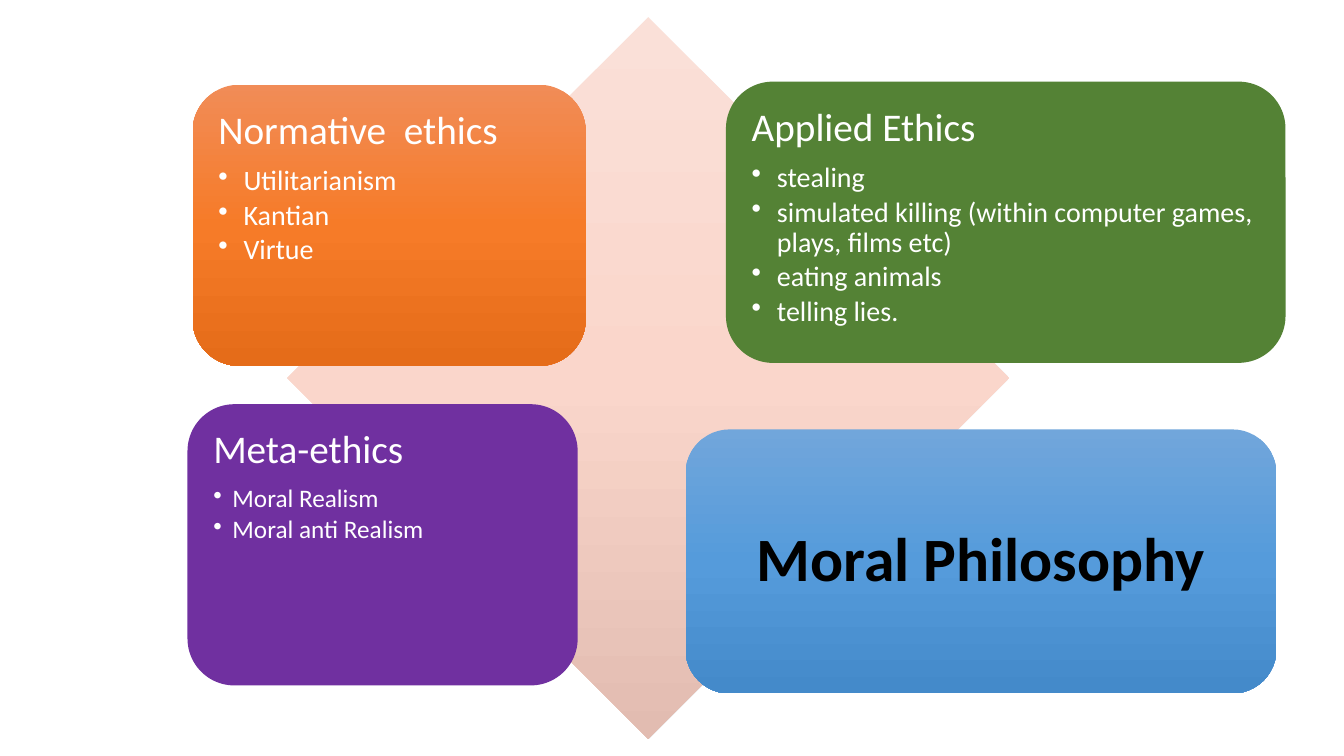
from copy import deepcopy

from pptx import Presentation
from pptx.dml.color import RGBColor
from pptx.enum.shapes import MSO_SHAPE as Shape
from pptx.enum.text import MSO_ANCHOR as Anchor, MSO_AUTO_SIZE as AutoSize, PP_ALIGN as Align
from pptx.oxml.ns import qn
from pptx.oxml.xmlchemy import OxmlElement
from pptx.util import Pt

PX = 9144  # EMU per px, 100 px to the inch
FONT = "Calibri"
TITLE_ONLY = 5

WHITE = RGBColor(0xFF, 0xFF, 0xFF)
BLACK = RGBColor(0x00, 0x00, 0x00)
GREEN = RGBColor(0x54, 0x82, 0x35)
PURPLE = RGBColor(0x70, 0x30, 0xA0)
PINKS = [RGBColor(0xFA, 0xE0, 0xD8), RGBColor(0xFA, 0xD6, 0xCB), RGBColor(0xE2, 0xBC, 0xB1)]
ORANGES = [RGBColor(0xF1, 0x8C, 0x57), RGBColor(0xF6, 0x7B, 0x28), RGBColor(0xE5, 0x6C, 0x19)]
BLUES = [RGBColor(0x71, 0xA6, 0xDB), RGBColor(0x55, 0x9B, 0xDB), RGBColor(0x44, 0x8A, 0xCA)]

# box, fill, heading, bullet size, bullet indent, bullets
BRANCHES = [
    ((191, 84, 390, 279), ORANGES, "Normative  ethics", 20, 25,
     ["Utilitarianism", "Kantian", "Virtue"]),
    ((720, 81, 555, 279), GREEN, "Applied Ethics", 20, 25,
     ["stealing", "simulated killing (within computer games, plays, films etc)",
      "eating animals", "telling lies."]),
    ((186, 401, 387, 279), PURPLE, "Meta-ethics", 18, 19,
     ["Moral Realism", "Moral anti Realism"]),
]


def fill_gradient(fill, stop_list_owner, colors):
    """Fill from top to bottom with evenly spaced colours."""
    fill.gradient()
    fill.gradient_angle = 270
    stop_list = stop_list_owner.find(".//" + qn("a:gsLst"))
    while len(stop_list) < len(colors):
        stop_list.append(deepcopy(stop_list[-1]))
    for index, (stop, color) in enumerate(zip(fill.gradient_stops, colors)):
        stop.position = index / (len(colors) - 1)
        stop.color.rgb = color


def add_panel(page, kind, box, color):
    """Add a borderless shape; a list of colours gives a gradient."""
    panel = page.shapes.add_shape(kind, *(length * PX for length in box))
    panel.shadow.inherit = False
    panel.line.fill.background()
    if isinstance(color, list):
        fill_gradient(panel.fill, panel._element.spPr, color)
    else:
        panel.fill.solid()
        panel.fill.fore_color.rgb = color
    return panel


def set_frame(frame, inset, anchor):
    frame.word_wrap = True
    frame.auto_size = AutoSize.NONE
    frame.vertical_anchor = anchor
    frame.margin_left = frame.margin_right = inset * PX
    frame.margin_top = frame.margin_bottom = inset * PX


def write(para, text, size, color=WHITE, bold=False, align=Align.LEFT, gap=0.35):
    """Write one paragraph; gap is the space after it as a share of the size."""
    para.alignment = align
    para.line_spacing = 0.9
    para.space_before = Pt(0)
    para.space_after = Pt(round(size * gap, 1))
    span = para.add_run()
    span.text = text
    span.font.name = FONT
    span.font.size = Pt(size)
    span.font.bold = bold
    span.font.color.rgb = color


def add_bullet(para, indent):
    properties = para._p.get_or_add_pPr()
    properties.set("marL", str(indent * PX))
    properties.set("indent", str(-indent * PX))
    bullet = OxmlElement("a:buChar")
    bullet.set("char", "•")
    properties.append(bullet)


def add_branch(page, box, color, heading, size, indent, bullets):
    frame = add_panel(page, Shape.ROUNDED_RECTANGLE, box, color).text_frame
    set_frame(frame, 12, Anchor.TOP)
    write(frame.paragraphs[0], heading, 28)
    for text in bullets:
        para = frame.add_paragraph()
        write(para, text, size, gap=0.15)
        add_bullet(para, indent)


def place_title(page, text, box):
    """Put the title placeholder in front of the panels."""
    title = page.shapes.title
    title.left, title.top, title.width, title.height = (length * PX for length in box)
    page.shapes._spTree.append(title._element)
    set_frame(title.text_frame, 18, Anchor.MIDDLE)
    write(title.text_frame.paragraphs[0], text, 44, color=BLACK, bold=True, align=Align.CENTER)


def main():
    deck = Presentation()
    deck.slide_width, deck.slide_height = 1333 * PX, 750 * PX
    page = deck.slides.add_slide(deck.slide_layouts[TITLE_ONLY])
    add_panel(page, Shape.DIAMOND, (285, 17, 716, 716), PINKS)
    for branch in BRANCHES:
        add_branch(page, *branch)
    add_panel(page, Shape.ROUNDED_RECTANGLE, (680, 426, 586, 262), BLUES)
    place_title(page, "Moral Philosophy", (693, 439, 560, 237))
    deck.save("out.pptx")


if __name__ == "__main__":
    main()
